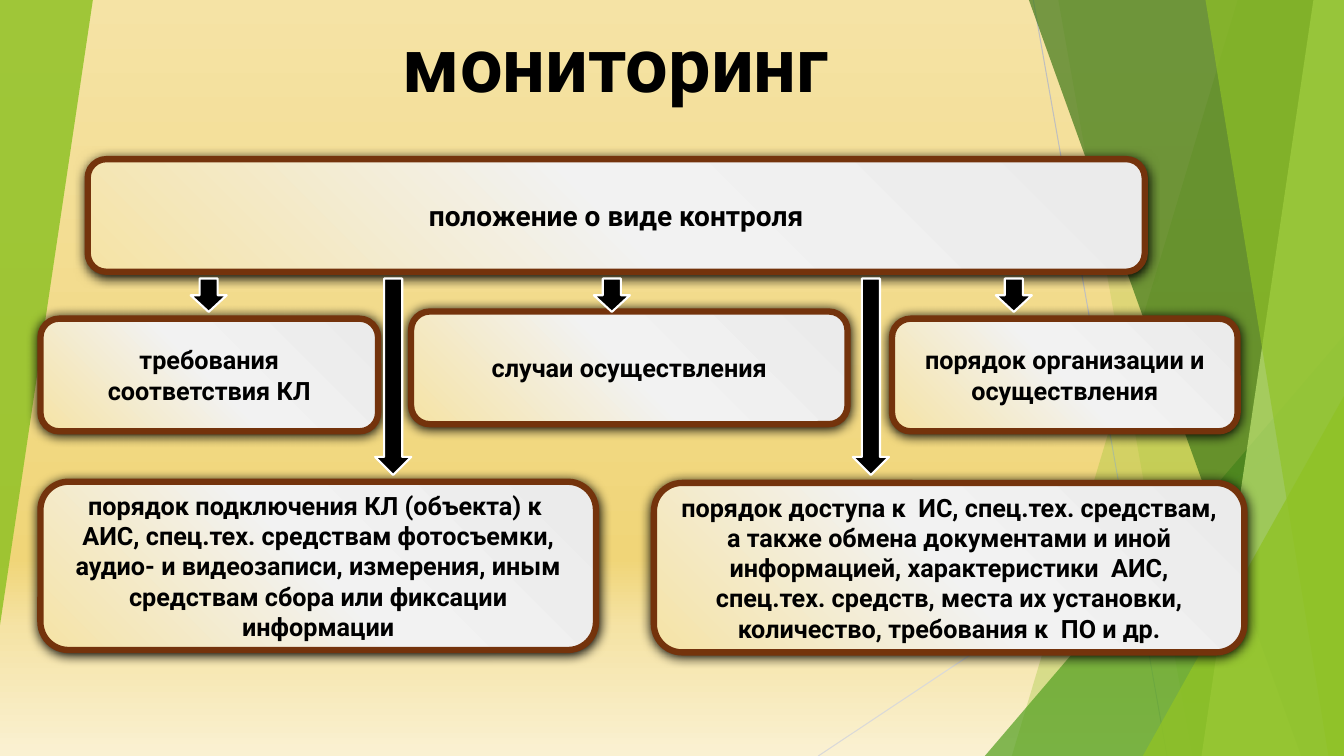
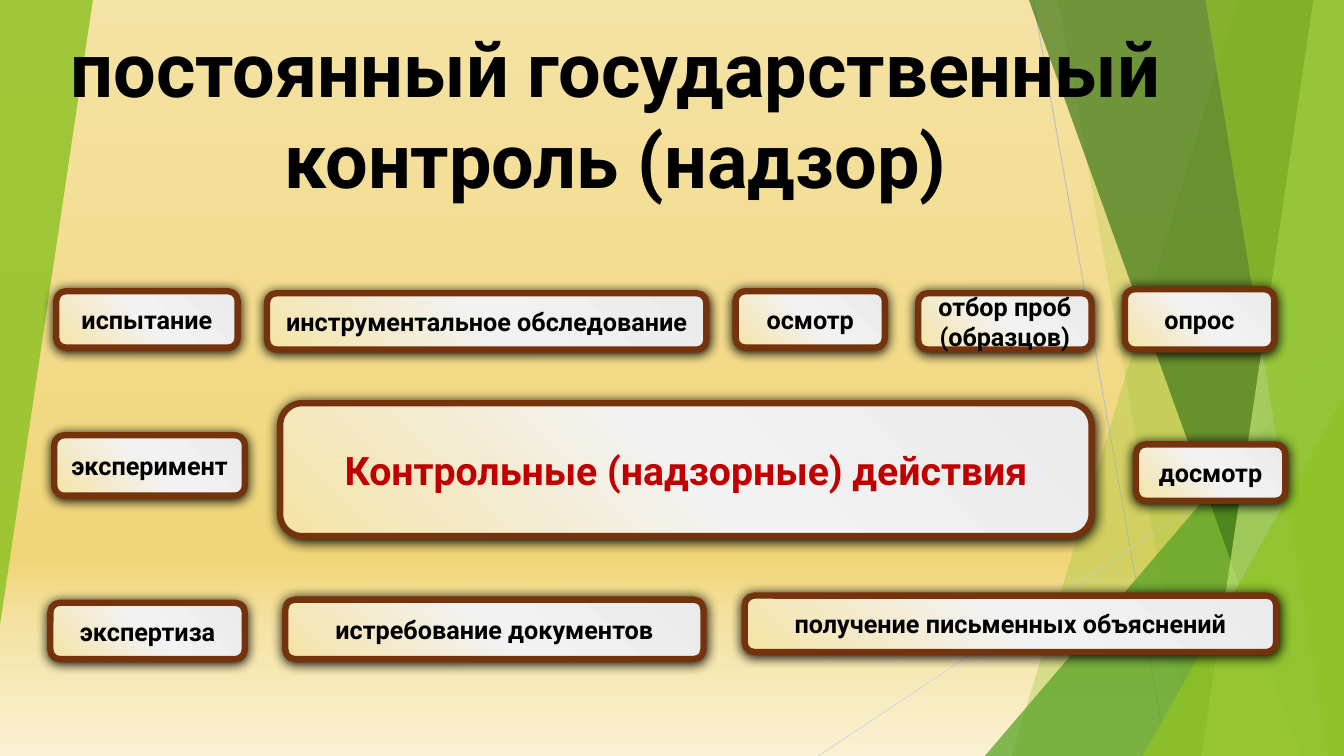
from lxml.etree import SubElement
from pptx import Presentation
from pptx.dml.color import RGBColor
from pptx.enum.shapes import MSO_CONNECTOR, MSO_SHAPE as SHAPE
from pptx.enum.text import MSO_ANCHOR as ANCHOR, MSO_AUTO_SIZE as AUTO, PP_ALIGN as ALIGN
from pptx.oxml.ns import qn
from pptx.util import Cm, Pt

WIDTH, HEIGHT = 33.87, 19.05
FONT = "Roboto"
BLACK = RGBColor(0x00, 0x00, 0x00)
WHITE = RGBColor(0xFF, 0xFF, 0xFF)
RED = RGBColor(0xC0, 0x00, 0x00)
BROWN = RGBColor(0x74, 0x33, 0x0C)
SAND = RGBColor(0xF5, 0xE3, 0xA5)
GOLD = RGBColor(0xF0, 0xD5, 0x78)
CREAM = RGBColor(0xFA, 0xF1, 0xD2)
SILVER = RGBColor(0xEB, 0xEB, 0xEB)
PALE = RGBColor(0xF2, 0xF2, 0xF2)
GREY = RGBColor(0xBF, 0xBF, 0xBF)
LIGHT_GREY = RGBColor(0xD9, 0xD9, 0xD9)
GREEN = RGBColor(0x90, 0xC2, 0x26)
MID_GREEN = RGBColor(0x54, 0xA0, 0x21)
DARK_GREEN = RGBColor(0x3F, 0x78, 0x19)
LIME = RGBColor(0xC0, 0xE4, 0x74)

PAGE_STOPS = [(0, SAND), (74, GOLD), (83, SAND), (100, CREAM)]
BOX_STOPS = [(0, SILVER), (50, PALE), (100, SAND)]

# Decoration, back to front
THIN_LINES = [  # x1, y1, x2, y2, colour
    (26.04, 0, 29.41, HEIGHT, GREY),
    (WIDTH, 10.24, 20.62, HEIGHT, LIGHT_GREY),
]
FACETS = [  # kind, place, colour, opacity in percent
    ("band", (31.19, 25.5), GREEN, 30),
    ("band", (26.67, 30.05), GREEN, 20),
    ("corner", (24.82, 8.46), MID_GREEN, 72),
    ("band", (25.93, 32.79), DARK_GREEN, 70),
    ("band", (33.1, 30.28), LIME, 70),
    ("band", (30.38, 33.48), GREEN, 65),
    ("corner", (28.8, 9.98), GREEN, 80),
    ("left", (2.34, 15.75), GREEN, 85),
]

ARROW_TOP, ARROW_WIDTH = 7.02, 0.91
SHORT, LONG = 0.84, 4.95

SLIDES = [
    {
        "title": "мониторинг",
        "title_height": 2.39,
        "boxes": [  # text, (left, top, width, height), format
            ("положение о виде контроля", (2.21, 4.01, 26.64, 2.84), {"size": 20}),
            ("требования соответствия КЛ", (1.02, 8.03, 8.51, 2.84), {}),
            ("случаи осуществления", (10.36, 7.85, 11, 2.84), {}),
            ("порядок организации и осуществления", (22.48, 8.03, 8.71, 2.84), {}),
            ("порядок подключения КЛ (объекта) к  АИС, спец.тех. средствам "
             "фотосъемки, аудио- и видеозаписи, измерения, иным средствам "
             "сбора или фиксации информации", (1.02, 12.14, 14, 4.24), {}),
            ("порядок доступа к  ИС, спец.тех. средствам, а также обмена "
             "документами и иной информацией, характеристики  АИС, спец.тех. "
             "средств, места их установки, количество, требования к  ПО и др.",
             (16.48, 12.17, 14.88, 4.27), {}),
        ],
        "arrows": [  # centre, length
            (5.26, SHORT), (9.91, LONG), (15.42, SHORT), (21.95, LONG), (25.55, SHORT),
        ],
    },
    {
        "title": "постоянный государственный контроль (надзор)",
        "title_height": 4.8,
        "boxes": [
            ("испытание", (1.42, 7.34, 4.57, 1.42), {}),
            ("инструментальное обследование", (6.73, 7.39, 11.07, 1.42), {}),
            ("осмотр", (18.54, 7.34, 3.76, 1.42), {}),
            ("отбор проб (образцов)", (23.14, 7.39, 4.37, 1.42), {}),
            ("опрос", (28.35, 7.29, 3.76, 1.52), {}),
            ("эксперимент", (1.37, 10.97, 4.8, 1.52), {}),
            ("Контрольные (надзорные) действия", (7.06, 10.16, 20.45, 3.35),
             {"size": 28, "color": RED}),
            ("досмотр", (28.63, 11.2, 3.76, 1.42), {}),
            ("экспертиза", (1.27, 15.19, 4.9, 1.42), {}),
            ("истребование документов", (7.19, 15.11, 10.54, 1.5), {}),
            ("получение письменных объяснений", (18.77, 15.01, 13.39, 1.42), {}),
        ],
        "arrows": [],
    },
]


def cms(*values):
    return [Cm(v) for v in values]


def set_gradient(fill, element, stops, clockwise):
    """Fill with any number of stops; element is the one that holds the fill."""
    fill.gradient()
    fill.gradient_angle = 360 - clockwise
    stop_list = element.find(".//" + qn("a:gsLst"))
    for old in list(stop_list):
        stop_list.remove(old)
    for percent, color in stops:
        stop = SubElement(stop_list, qn("a:gs"), pos=str(percent * 1000))
        SubElement(stop, qn("a:srgbClr"), val=str(color))


def write(shape, text, size=18, color=BLACK, anchor=ANCHOR.MIDDLE):
    tf = shape.text_frame
    tf.word_wrap = True
    tf.auto_size = AUTO.NONE
    tf.vertical_anchor = anchor
    p = tf.paragraphs[0]
    p.alignment = ALIGN.CENTER
    r = p.add_run()
    r.text = text
    r.font.name, r.font.size, r.font.bold = FONT, Pt(size), True
    r.font.color.rgb = color


def add_thin_line(shapes, x1, y1, x2, y2, color):
    line = shapes.add_connector(MSO_CONNECTOR.STRAIGHT, *cms(x1, y1, x2, y2))
    line.line.color.rgb = color
    line.line.width = Pt(0.75)
    SubElement(line.element.spPr, qn("a:effectLst"))
    return line


def add_facet(shapes, kind, place, color, opacity):
    """Band: top and bottom x of its left edge. Corner: left, top. Left: width, height."""
    a, b = place
    if kind == "band":
        builder = shapes.build_freeform(Cm(a), 0)
        builder.add_line_segments(
            [cms(WIDTH, 0), cms(WIDTH, HEIGHT), cms(b, HEIGHT)], close=True)
        facet = builder.convert_to_shape()
    else:
        box = (a, b, WIDTH - a, HEIGHT - b) if kind == "corner" else (0, 0, a, b)
        facet = shapes.add_shape(SHAPE.ISOSCELES_TRIANGLE, *cms(*box))
        facet.adjustments[0] = 1
        facet.rotation = 0 if kind == "corner" else 180
    facet.shadow.inherit = False
    facet.fill.solid()
    facet.fill.fore_color.rgb = color
    facet.line.fill.background()
    rgb = facet.element.spPr.find(qn("a:solidFill")).find(qn("a:srgbClr"))
    SubElement(rgb, qn("a:alpha"), val=str(opacity * 1000))
    return facet


def decorate_master(master, shapes):
    """Draw the decoration with a slide's shapes, then move it to the master."""
    set_gradient(master.background.fill, master.element, PAGE_STOPS, 90)
    parts = [add_thin_line(shapes, *line) for line in THIN_LINES]
    parts += [add_facet(shapes, *facet) for facet in FACETS]
    for i, part in enumerate(parts):
        part.element.xpath(".//p:cNvPr")[0].set("id", str(100 + i))
        master.shapes.element.insert(2 + i, part.element)


def add_box(shapes, text, place, style):
    box = shapes.add_shape(SHAPE.ROUNDED_RECTANGLE, *cms(*place))
    box.line.color.rgb = BROWN
    box.line.width = Pt(4.5)
    set_gradient(box.fill, box.element, BOX_STOPS, 135)
    box.shadow.inherit = False
    shadow = SubElement(
        box.element.spPr.find(qn("a:effectLst")), qn("a:outerShdw"),
        blurRad=str(Pt(8.5)), dist=str(Pt(1)), dir="5400000", rotWithShape="0")
    SubElement(shadow, qn("a:srgbClr"), val=str(BLACK))
    write(box, text, **style)


def add_arrow(shapes, center, length):
    arrow = shapes.add_shape(
        SHAPE.DOWN_ARROW,
        *cms(center - ARROW_WIDTH / 2, ARROW_TOP, ARROW_WIDTH, length))
    arrow.shadow.inherit = False
    arrow.fill.solid()
    arrow.fill.fore_color.rgb = BLACK
    arrow.line.color.rgb = WHITE
    arrow.line.width = Pt(1.5)


def main():
    prs = Presentation()
    prs.slide_width, prs.slide_height = cms(WIDTH, HEIGHT)
    for i, content in enumerate(SLIDES):
        s = prs.slides.add_slide(prs.slide_layouts[5])
        if i == 0:
            decorate_master(prs.slide_master, s.shapes)
        title = s.shapes.title
        title.left, title.top, title.width, title.height = cms(
            0.79, 0.46, 29.46, content["title_height"])
        write(title, content["title"], size=54, anchor=ANCHOR.BOTTOM)
        for box in content["boxes"]:
            add_box(s.shapes, *box)
        for arrow in content["arrows"]:
            add_arrow(s.shapes, *arrow)
    prs.save("out.pptx")


if __name__ == "__main__":
    main()
